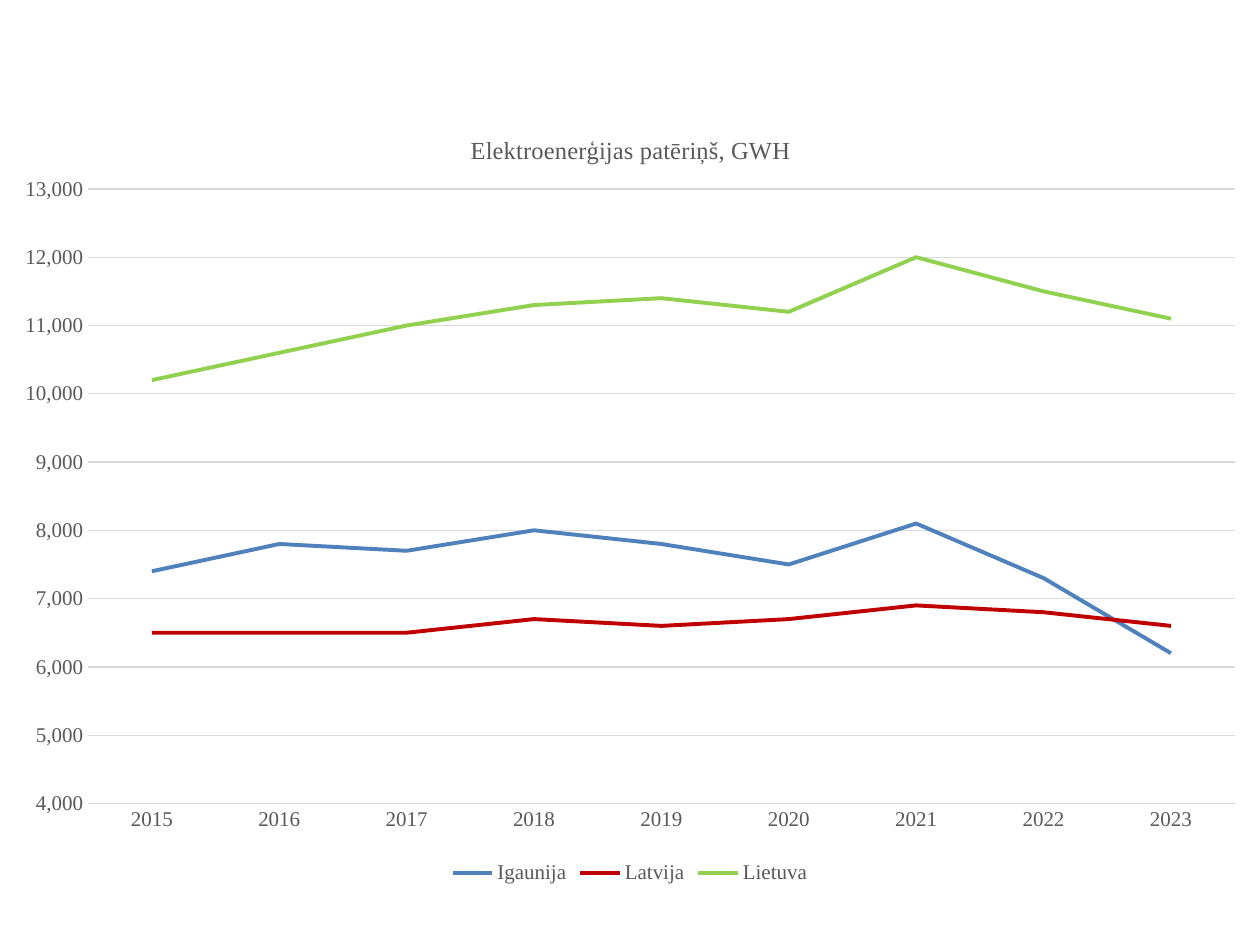
from pptx import Presentation
from pptx.chart.data import CategoryChartData
from pptx.dml.color import RGBColor
from pptx.enum.chart import XL_CHART_TYPE, XL_LEGEND_POSITION, XL_TICK_MARK
from pptx.oxml import parse_xml
from pptx.oxml.ns import nsdecls
from pptx.util import Pt

LINE_CHART = XL_CHART_TYPE.LINE
LEGEND_BOTTOM = XL_LEGEND_POSITION.BOTTOM
NO_TICK = XL_TICK_MARK.NONE

FONT = "Times New Roman"
COLORS = {
    "text": "595959",
    "grid": "D9D9D9",
    "Igaunija": "4F81BD",
    "Latvija": "C00000",
    "Lietuva": "92D050",
}
YEARS = [str(year) for year in range(2015, 2024)]
CONSUMPTION = {
    "Igaunija": [7400, 7800, 7700, 8000, 7800, 7500, 8100, 7300, 6200],
    "Latvija": [6500, 6500, 6500, 6700, 6600, 6700, 6900, 6800, 6600],
    "Lietuva": [10200, 10600, 11000, 11300, 11400, 11200, 12000, 11500, 11100],
}


def rgb(name):
    """Return the palette colour with the given name."""
    return RGBColor.from_string(COLORS[name])


def style_font(font, size):
    """Apply the chart's typeface, text colour and a size in points."""
    font.name = FONT
    font.size = Pt(size)
    font.bold = False
    font.color.rgb = rgb("text")


def style_line(line, color, width):
    """Give a line its palette colour and width in points."""
    line.color.rgb = rgb(color)
    line.width = Pt(width)


def set_layout(parent, index, target="", **fractions):
    """Place a chart part at fractions of the chart's size."""
    for old_layout in parent.xpath("c:layout"):
        parent.remove(old_layout)
    modes = "".join(f'<c:{axis}Mode val="edge"/>' for axis in "xy")
    places = "".join(f'<c:{key} val="{value}"/>' for key, value in fractions.items())
    parent.insert(index, parse_xml(
        f'<c:layout {nsdecls("c")}><c:manualLayout>{target}{modes}{places}'
        "</c:manualLayout></c:layout>"))


def style_axes(chart):
    """Format the year axis and the consumption axis with its gridlines."""
    years, consumption = chart.category_axis, chart.value_axis
    for axis in (years, consumption):
        axis.major_tick_mark = axis.minor_tick_mark = NO_TICK
        style_font(axis.tick_labels.font, 12)
    style_line(years.format.line, "grid", 0.75)
    consumption.minimum_scale = 4000
    consumption.maximum_scale = 13000
    consumption.major_unit = 1000
    consumption.tick_labels.number_format = "#,##0"
    consumption.tick_labels.number_format_is_linked = False
    consumption.format.line.fill.background()
    style_line(consumption.major_gridlines.format.line, "grid", 0.75)


def add_consumption_chart(slide, left, top, width, height):
    """Draw electricity consumption by country in the given box."""
    data = CategoryChartData(number_format="#,##0")
    data.categories = YEARS
    for country, values in CONSUMPTION.items():
        data.add_series(country, values)
    chart = slide.shapes.add_chart(LINE_CHART, left, top, width, height, data).chart
    style_font(chart.font, 12)

    chart.has_title = True
    heading = chart.chart_title.text_frame.paragraphs[0]
    heading.text = "Elektroenerģijas patēriņš, GWH"
    style_font(heading.runs[0].font, 14)
    chart.chart_title.include_in_layout = False

    chart.has_legend = True
    chart.legend.position = LEGEND_BOTTOM
    chart.legend.include_in_layout = False
    style_font(chart.legend.font, 12)

    style_axes(chart)
    chart.plots[0].vary_by_categories = False
    for country in chart.plots[0].series:
        country.smooth = False
        style_line(country.format.line, country.name, 2.25)

    set_layout(chart.element.xpath("c:chart/c:title")[0], 1, x=0.37, y=0.04)
    set_layout(chart.element.xpath("c:chart/c:plotArea")[0], 0,
               '<c:layoutTarget val="inner"/>', x=0.07, y=0.115, w=0.91, h=0.777)


def main():
    """Build the one-slide presentation."""
    presentation = Presentation()
    presentation.slide_width = Pt(720)
    presentation.slide_height = Pt(540)
    slide = presentation.slides.add_slide(presentation.slide_layouts[6])
    add_consumption_chart(slide, Pt(0), Pt(56), Pt(720), Pt(452))
    presentation.save("out.pptx")


if __name__ == "__main__":
    main()
